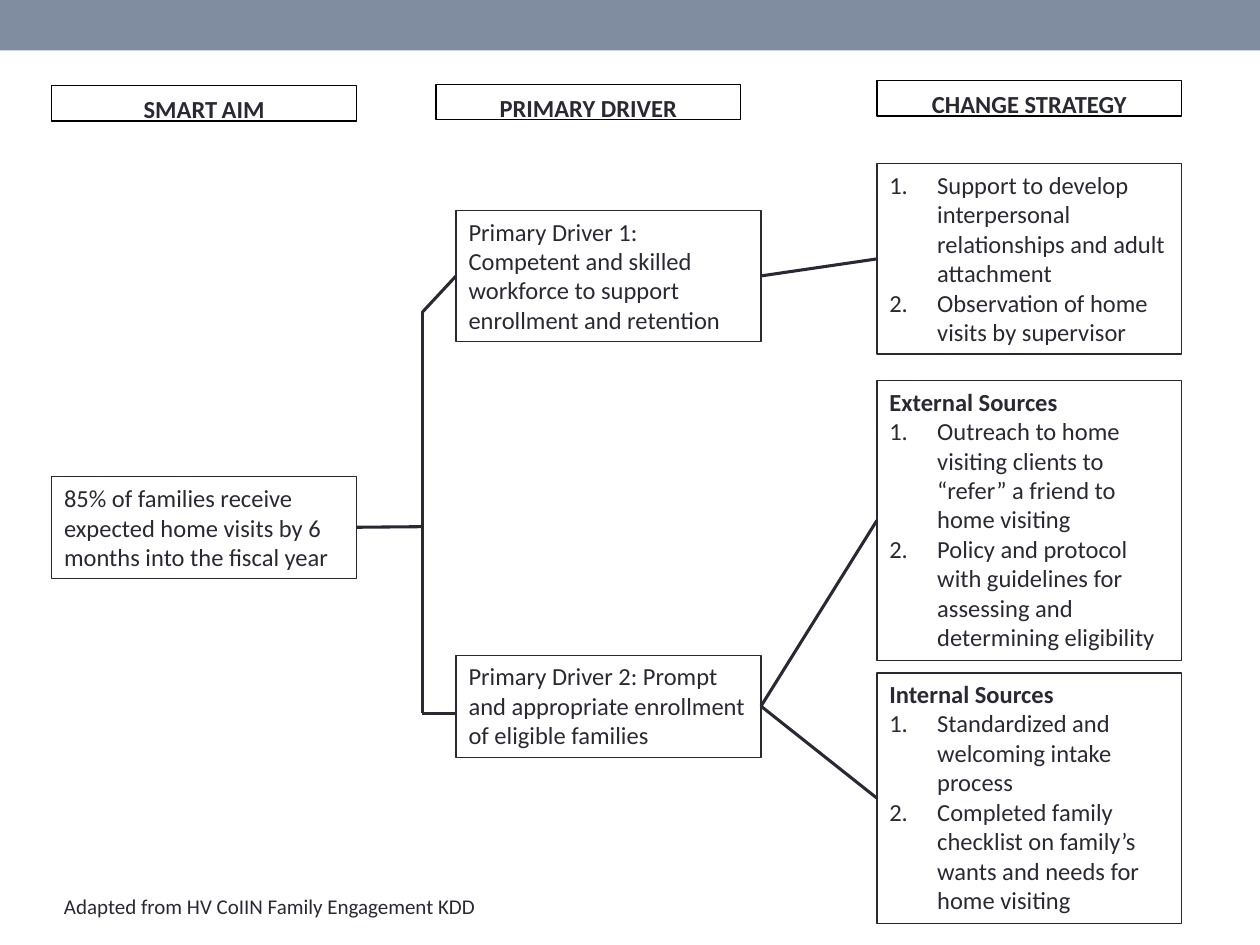
import pptx
import pptx.util
import pptx.dml.color
import pptx.enum.shapes
import pptx.enum.text
import pptx.oxml
import pptx.oxml.ns
from lxml import etree

Inches = pptx.util.Inches
Pt = pptx.util.Pt
MSO_SHAPE = pptx.enum.shapes.MSO_SHAPE
ANCHOR = pptx.enum.text.MSO_ANCHOR
AUTO_SIZE = pptx.enum.text.MSO_AUTO_SIZE
ALIGN = pptx.enum.text.PP_ALIGN

TOP, LEFT, BOTTOM, RIGHT = range(4)


def rgb(color):
    return pptx.dml.color.RGBColor.from_string(color)


class Diagram:
    font = "Calibri"
    ink = "292934"
    box_width = 2.42

    def __init__(self, slide):
        self.s = slide

    def rect(self, x, y, w, h, fill=None, line=None):
        sp = self.s.shapes.add_shape(
            MSO_SHAPE.RECTANGLE, Inches(x), Inches(y), Inches(w), Inches(h))
        sp.shadow.inherit = False
        if fill:
            sp.fill.solid()
            sp.fill.fore_color.rgb = rgb(fill)
        else:
            sp.fill.background()
        if line:
            sp.line.color.rgb = rgb(line)
            sp.line.width = Pt(0.75)
        else:
            sp.line.fill.background()
        return sp

    def run(self, p, text, size=14, bold=False):
        r = p.add_run()
        r.text = text
        r.font.name = self.font
        r.font.size = Pt(size)
        r.font.bold = bold
        r.font.color.rgb = rgb(self.ink)

    def header(self, x, y, runs):
        sp = self.rect(x, y, self.box_width, 0.28, "FFFFFF", "000000")
        tf = sp.text_frame
        tf.word_wrap = True
        tf.vertical_anchor = ANCHOR.TOP
        p = tf.paragraphs[0]
        p.alignment = ALIGN.CENTER
        p.line_spacing = 1.07
        p.space_after = Pt(8)
        for text, size in runs:
            self.run(p, text, size, bold=True)

    def box(self, x, y, h, text=None, title=None, items=(), anchor=ANCHOR.TOP):
        sp = self.rect(x, y, self.box_width, h, line=self.ink)
        tf = sp.text_frame
        tf.word_wrap = True
        tf.auto_size = AUTO_SIZE.SHAPE_TO_FIT_TEXT
        tf.vertical_anchor = anchor
        lines = [(t, False) for t in (text, title) if t]
        lines += [(item, True) for item in items]
        for i, (line, numbered) in enumerate(lines):
            p = tf.add_paragraph() if i else tf.paragraphs[0]
            p.alignment = ALIGN.LEFT
            if numbered:
                self.number(p)
            self.run(p, line, bold=line == title)
        return sp

    def number(self, p):
        pPr = p._p.get_or_add_pPr()
        pPr.set("marL", str(Inches(0.38)))
        pPr.set("indent", str(Inches(-0.38)))
        bu = etree.SubElement(pPr, pptx.oxml.ns.qn("a:buAutoNum"))
        bu.set("type", "arabicPeriod")

    def note(self, x, y, w, h, text):
        tf = self.s.shapes.add_textbox(
            Inches(x), Inches(y), Inches(w), Inches(h)).text_frame
        tf.word_wrap = True
        tf.auto_size = AUTO_SIZE.SHAPE_TO_FIT_TEXT
        self.run(tf.paragraphs[0], text, 12)

    def line(self, start, end, begin=None, finish=None):
        """Draw a line; begin and finish are (shape, side) pairs to join."""
        c = self.s.shapes.add_connector(
            pptx.enum.shapes.MSO_CONNECTOR.STRAIGHT,
            *[Inches(v) for v in (*start, *end)])
        c.line.color.rgb = rgb(self.ink)
        c.line.width = Pt(1.75)
        etree.SubElement(c._element.spPr, pptx.oxml.ns.qn("a:effectLst"))
        if begin:
            c.begin_connect(*begin)
        if finish:
            c.end_connect(*finish)


def main():
    prs = pptx.Presentation()
    prs.slide_width, prs.slide_height = Inches(10), Inches(7.5)
    d = Diagram(prs.slides.add_slide(prs.slide_layouts[6]))
    aim_x, driver_x, change_x = 0.41, 3.62, 6.96
    driver_right = driver_x + d.box_width

    # Top band and column headers
    d.rect(0, 0, 10, 0.4, fill="808DA0")
    d.header(aim_x, 0.68, [("SMART", 14), (" ", 11), ("AIM", 14)])
    d.header(3.46, 0.67, [("PRIMARY DRIVER", 14)])
    d.header(change_x, 0.64, [("CHANGE STRATEGY", 14)])

    # Source note
    d.note(aim_x, 7.04, 8.37, 0.3, "Adapted from HV CoIIN Family Engagement KDD")

    # Aim and drivers
    aim = d.box(aim_x, 3.78, 0.81, "85% of families receive expected home visits "
                "by 6 months into the fiscal year", anchor=ANCHOR.MIDDLE)
    enrollment = d.box(driver_x, 5.2, 0.81, "Primary Driver 2: Prompt and "
                       "appropriate enrollment of eligible families")
    workforce = d.box(driver_x, 1.67, 1.04, "Primary Driver 1: Competent and skilled "
                      "workforce to support enrollment and retention")

    # Change strategies
    support = d.box(change_x, 1.3, 1.51, items=[
        "Support to develop interpersonal relationships and adult attachment",
        "Observation of home visits by supervisor"])
    external = d.box(change_x, 3.02, 2.22, title="External Sources", items=[
        "Outreach to home visiting clients to “refer” a friend to home visiting",
        "Policy and protocol with guidelines for assessing and determining eligibility"])
    internal = d.box(change_x, 5.34, 1.99, title="Internal Sources", items=[
        "Standardized and welcoming intake process",
        "Completed family checklist on family’s wants and needs for home visiting"])

    # Strategies to drivers
    for strategy, y, driver, driver_y in [(support, 2.06, workforce, 2.19),
                                          (external, 4.13, enrollment, 5.6),
                                          (internal, 6.33, enrollment, 5.6)]:
        d.line((change_x, y), (driver_right, driver_y),
               (strategy, LEFT), (driver, RIGHT))

    # Drivers to aim, by way of a vertical trunk
    trunk_x, trunk_top, trunk_bottom = 3.35, 2.48, 5.66
    d.line((driver_x, 2.19), (trunk_x, trunk_top), begin=(workforce, LEFT))
    d.line((driver_x, trunk_bottom), (trunk_x, trunk_bottom))
    d.line((trunk_x, trunk_top), (trunk_x, trunk_bottom))
    d.line((aim_x + d.box_width, 4.18), (trunk_x, 4.18), begin=(aim, RIGHT))

    prs.save("out.pptx")


if __name__ == "__main__":
    main()
